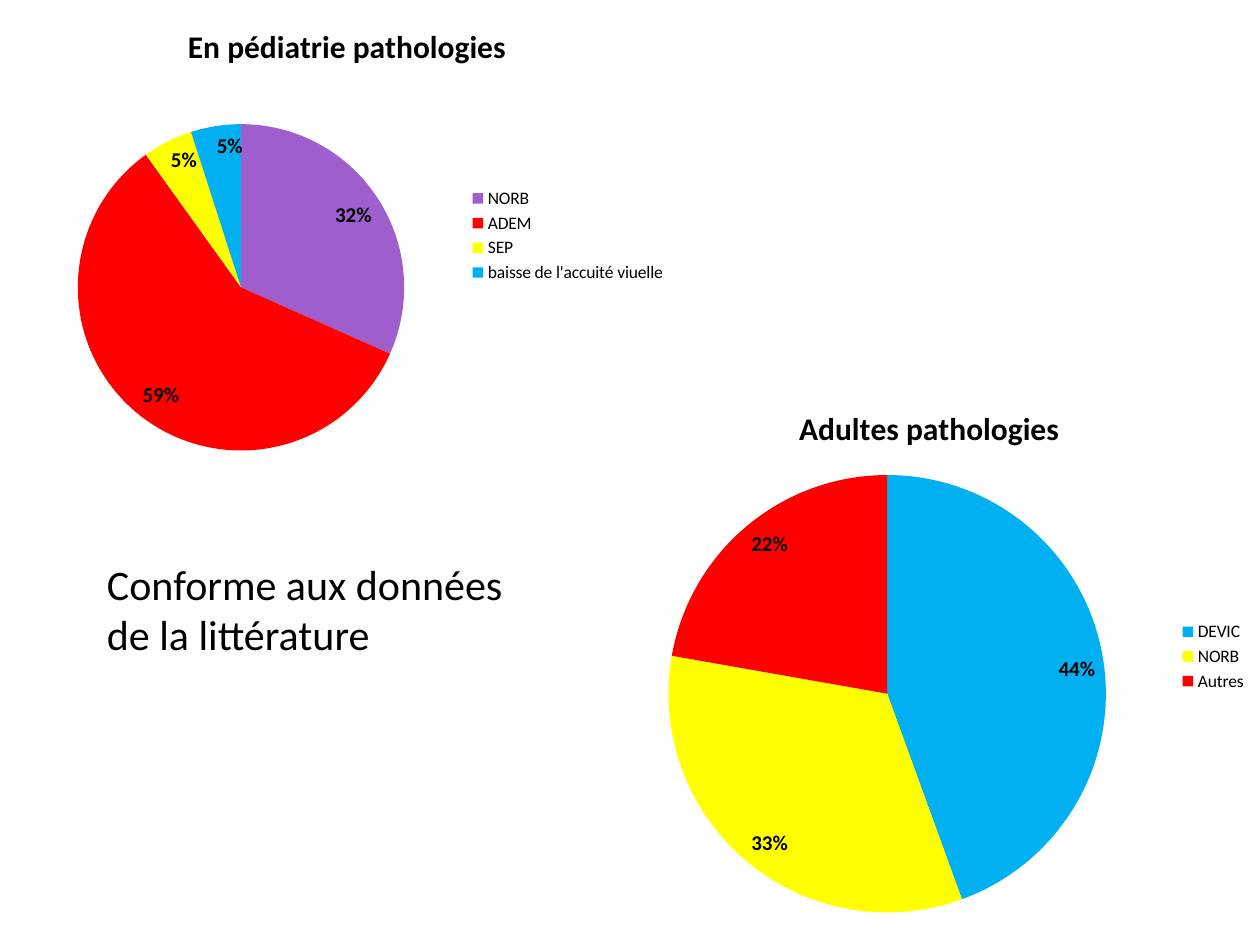
"""Build a slide comparing paediatric and adult pathologies in two pie charts."""
from pptx import Presentation, util as u
from pptx.chart import data as chart_data
from pptx.dml import color
from pptx.enum import chart as charts
from pptx.oxml import parse_xml
from pptx.oxml import ns

FONT = "Calibri"
PIES = [
    {
        "title": "En pédiatrie pathologies",
        "frame": (8.6, 1.4, 379.4, 266.4),
        "circle": (44.5, 71, 186.5),
        "slices": [("NORB", 32, "9E5ECE"), ("ADEM", 59, "FF0000"),
                   ("SEP", 5, "FFFF00"), ("baisse de l'accuité viuelle", 5, "00B0F0")],
    },
    {
        "title": "Adultes pathologies",
        "frame": (342, 218.9, 378, 312.5),
        "circle": (382, 271.5, 250),
        "slices": [("DEVIC", 44, "00B0F0"), ("NORB", 33, "FFFF00"), ("Autres", 22, "FF0000")],
    },
]
CONCLUSION = "Conforme aux données de la littérature"
CONCLUSION_FRAME = (54, 315.4, 260.6, 65.5)


def rgb(value):
    return color.RGBColor.from_string(value)


def points(values):
    return [u.Pt(value) for value in values]


def style(font, size, bold=False):
    font.name, font.size, font.bold = FONT, u.Pt(size), bold
    font.color.rgb = rgb("000000")


def place_circle(chart, frame, circle):
    left, top, width, height = frame
    x, y, diameter = circle
    fractions = {"x": (x - left) / width, "y": (y - top) / height,
                 "w": diameter / width, "h": diameter / height}
    sizes = "".join(f'<c:{name} val="{value:.4f}"/>' for name, value in fractions.items())
    plot_area = chart.plots[0]._element.getparent()
    for layout in plot_area.findall(ns.qn("c:layout")):
        plot_area.remove(layout)
    plot_area.insert(0, parse_xml(
        f'<c:layout {ns.nsdecls("c")}><c:manualLayout><c:layoutTarget val="inner"/>'
        f'<c:xMode val="edge"/><c:yMode val="edge"/>{sizes}</c:manualLayout></c:layout>'))


def add_pie(slide, pie):
    names, values, colours = zip(*pie["slices"])
    content = chart_data.CategoryChartData()
    content.categories = names
    content.add_series("Series 1", values)
    chart = slide.shapes.add_chart(
        charts.XL_CHART_TYPE.PIE, *points(pie["frame"]), content).chart
    style(chart.font, 10)

    chart.has_title = True
    title = chart.chart_title.text_frame
    title.text = pie["title"]
    style(title.paragraphs[0].runs[0].font, 18, True)
    chart.chart_title.include_in_layout = False

    chart.has_legend = True
    chart.legend.position = charts.XL_LEGEND_POSITION.RIGHT
    chart.legend.include_in_layout = False

    plot = chart.plots[0]
    plot.vary_by_categories = True
    for index, colour in enumerate(colours):
        slice_format = plot.series[0].points[index].format
        slice_format.fill.solid()
        slice_format.fill.fore_color.rgb = rgb(colour)
        slice_format.line.fill.background()

    plot.has_data_labels = True
    labels = plot.data_labels
    labels.show_value = True
    labels.number_format, labels.number_format_is_linked = '0"%"', False
    labels.position = charts.XL_LABEL_POSITION.INSIDE_END
    style(labels.font, 12, True)
    place_circle(chart, pie["frame"], pie["circle"])


def main():
    presentation = Presentation()
    presentation.slide_width, presentation.slide_height = points((720, 540))
    slide = presentation.slides.add_slide(presentation.slide_layouts[6])
    for pie in PIES:
        add_pie(slide, pie)

    text_frame = slide.shapes.add_textbox(*points(CONCLUSION_FRAME)).text_frame
    text_frame.word_wrap = True
    text_frame.text = CONCLUSION
    style(text_frame.paragraphs[0].runs[0].font, 24)
    presentation.save("out.pptx")


if __name__ == "__main__":
    main()
